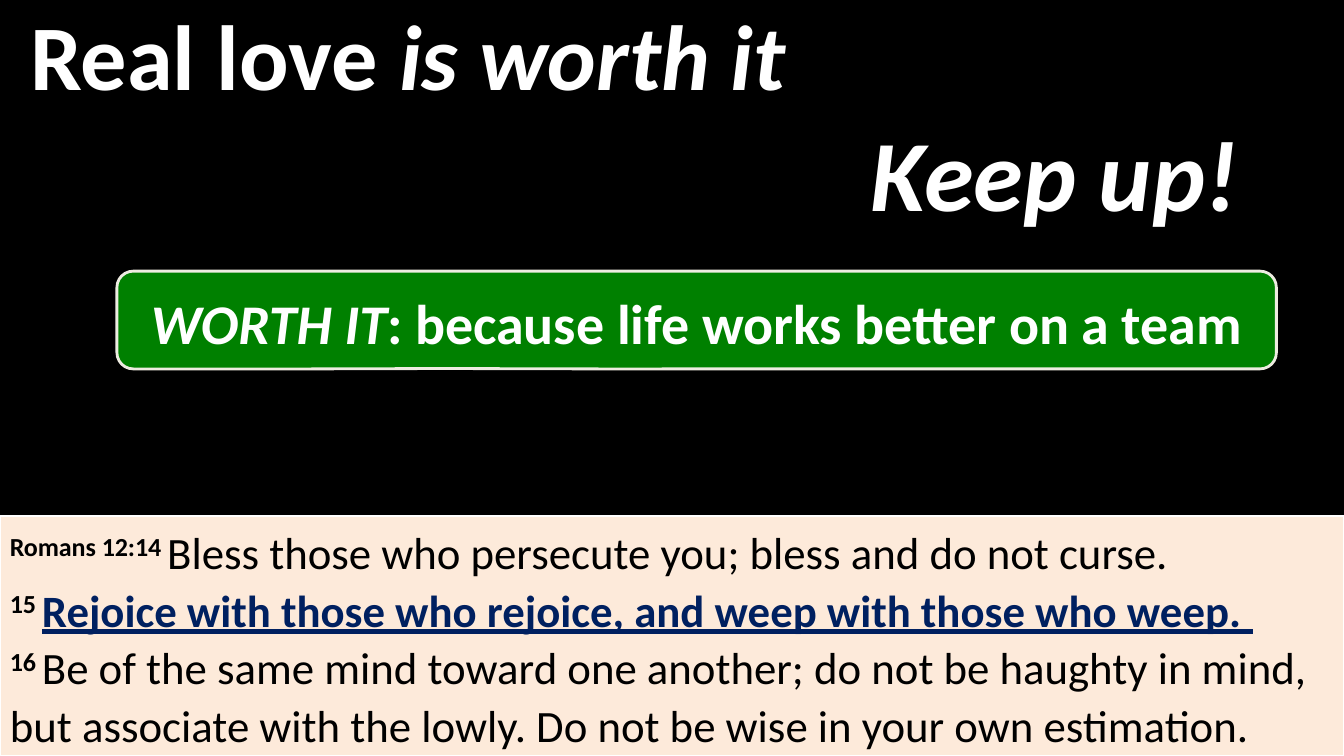
from dataclasses import dataclass
from typing import Optional

from pptx import Presentation
from pptx.dml.color import RGBColor
from pptx.enum.shapes import MSO_SHAPE
from pptx.enum.text import MSO_ANCHOR, MSO_AUTO_SIZE, PP_ALIGN
from pptx.util import Inches, Pt

BLACK = RGBColor(0x00, 0x00, 0x00)
WHITE = RGBColor(0xFF, 0xFF, 0xFF)
GREEN = RGBColor(0x00, 0x80, 0x00)
NAVY = RGBColor(0x00, 0x20, 0x60)
PEACH = RGBColor(0xFD, 0xEA, 0xDA)
CREAM = RGBColor(0xEE, 0xEC, 0xE1)
FONT_NAME = "Calibri"
CALLOUT_ADJUSTMENTS = (-0.219, 0.496, 0.167)


@dataclass(frozen=True)
class Span:
    text: str
    bold: Optional[bool] = None
    italic: Optional[bool] = None
    underline: Optional[bool] = None
    color: Optional[RGBColor] = None
    superscript: bool = False
    starts_line: bool = False


@dataclass(frozen=True)
class Panel:
    kind: MSO_SHAPE
    left: float
    top: float
    width: float
    height: float
    spans: tuple[Span, ...]
    size: int
    color: RGBColor
    bold: bool = True
    align: PP_ALIGN = PP_ALIGN.CENTER
    anchor: MSO_ANCHOR = MSO_ANCHOR.MIDDLE
    adjustments: tuple[float, ...] = ()
    fill: Optional[RGBColor] = None
    line: Optional[RGBColor] = None
    line_width: float = 0


TITLE_SPANS = (Span("Real love "), Span("is worth it", italic=True))

PANELS = (
    Panel(
        MSO_SHAPE.ROUNDED_RECTANGULAR_CALLOUT, 8.17, 1.18, 4.58, 0.96,
        (Span("Keep up!", italic=True),), 72, WHITE,
        adjustments=CALLOUT_ADJUSTMENTS,
    ),
    Panel(
        MSO_SHAPE.RECTANGLE, 0, 5.12, 13.33, 2.38,
        (
            Span("Romans 12:14 ", bold=True, superscript=True),
            Span("Bless those who persecute you; bless and do not curse. "),
            Span("15 ", bold=True, superscript=True, starts_line=True),
            Span("Rejoice with those who rejoice, and weep with those who weep. ",
                 bold=True, underline=True, color=NAVY),
            Span("16 ", bold=True, superscript=True, starts_line=True),
            Span("Be of the same mind toward one another; do not be haughty in mind, "
                 "but associate with the lowly. Do not be wise in your own estimation."),
        ),
        32, BLACK, bold=False, align=PP_ALIGN.LEFT, anchor=MSO_ANCHOR.TOP,
        fill=PEACH, line=WHITE, line_width=1.5,
    ),
    Panel(
        MSO_SHAPE.ROUNDED_RECTANGULAR_CALLOUT, 1.16, 2.69, 11.5, 0.97,
        (Span("WORTH IT", italic=True), Span(": because life works better on a team")),
        40, WHITE, adjustments=CALLOUT_ADJUSTMENTS,
        fill=GREEN, line=CREAM, line_width=2,
    ),
)


def write_spans(paragraph, spans: tuple[Span, ...], size: int, color: RGBColor,
                bold: bool, align: PP_ALIGN) -> None:
    paragraph.alignment = align
    paragraph.font.name = FONT_NAME
    paragraph.font.size = Pt(size)
    paragraph.font.bold = bold
    paragraph.font.color.rgb = color
    for span in spans:
        if span.starts_line:
            paragraph.add_line_break()
        run = paragraph.add_run()
        run.text = span.text
        run.font.bold = span.bold
        run.font.italic = span.italic
        run.font.underline = span.underline
        if span.color is not None:
            run.font.color.rgb = span.color
        if span.superscript:
            run.font._element.set("baseline", "30000")


def add_title(slide) -> None:
    title = slide.shapes.title
    title.left, title.top = Inches(0), Inches(0)
    title.width, title.height = Inches(13.33), Inches(1.07)
    title.fill.solid()
    title.fill.fore_color.rgb = BLACK
    frame = title.text_frame
    frame.auto_size = MSO_AUTO_SIZE.NONE
    frame.vertical_anchor = MSO_ANCHOR.MIDDLE
    frame.margin_left = Inches(0.3)
    write_spans(frame.paragraphs[0], TITLE_SPANS, 66, WHITE, True, PP_ALIGN.LEFT)


def add_panel(slide, panel: Panel) -> None:
    shape = slide.shapes.add_shape(
        panel.kind, Inches(panel.left), Inches(panel.top),
        Inches(panel.width), Inches(panel.height),
    )
    shape.shadow.inherit = False
    for index, value in enumerate(panel.adjustments):
        shape.adjustments[index] = value
    if panel.fill is None:
        shape.fill.background()
    else:
        shape.fill.solid()
        shape.fill.fore_color.rgb = panel.fill
    if panel.line is None:
        shape.line.fill.background()
    else:
        shape.line.color.rgb = panel.line
        shape.line.width = Pt(panel.line_width)
    frame = shape.text_frame
    frame.word_wrap = True
    frame.vertical_anchor = panel.anchor
    paragraph = frame.paragraphs[0]
    paragraph.line_spacing = 1.07
    write_spans(paragraph, panel.spans, panel.size, panel.color, panel.bold, panel.align)


def main() -> None:
    presentation = Presentation()
    presentation.slide_width = Inches(13.33)
    presentation.slide_height = Inches(7.5)
    slide = presentation.slides.add_slide(presentation.slide_layouts.get_by_name("Title Only"))
    slide.background.fill.solid()
    slide.background.fill.fore_color.rgb = BLACK
    add_title(slide)
    for panel in PANELS:
        add_panel(slide, panel)
    presentation.save("out.pptx")


if __name__ == "__main__":
    main()
